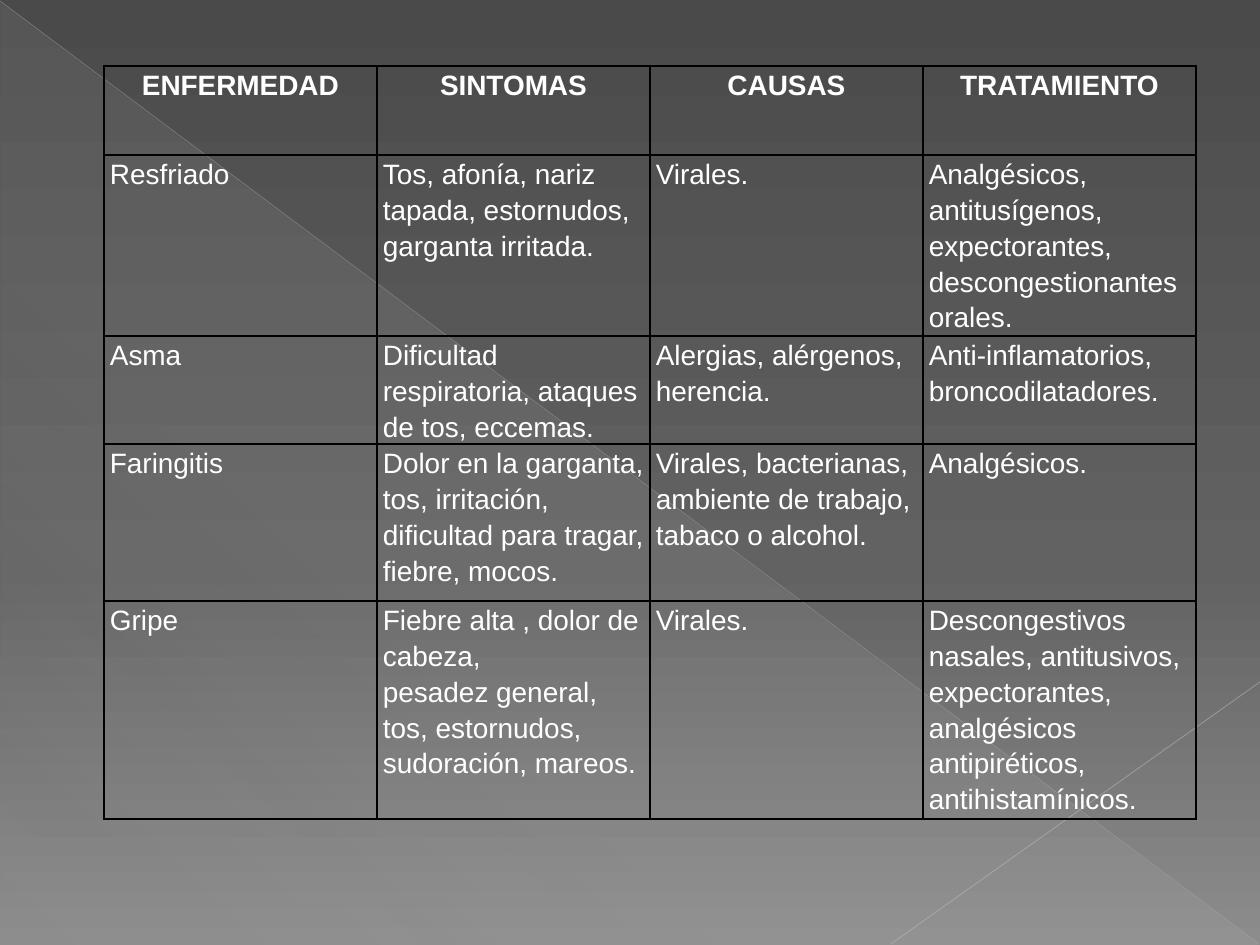
from lxml.etree import SubElement
from pptx import Presentation
from pptx.dml.color import RGBColor
from pptx.enum.shapes import MSO_CONNECTOR, MSO_SHAPE
from pptx.enum.text import PP_ALIGN
from pptx.oxml.ns import qn
from pptx.util import Pt

PX = 914400 // 126
BLACK = RGBColor(0x00, 0x00, 0x00)
WHITE = RGBColor(0xFF, 0xFF, 0xFF)
CHARCOAL = RGBColor(0x4A, 0x4A, 0x4A)
SLATE = RGBColor(0x62, 0x62, 0x62)
ASH = RGBColor(0x8C, 0x8C, 0x8C)
MIST = RGBColor(0xD2, 0xD2, 0xD2)
SILVER = RGBColor(0xBF, 0xBF, 0xBF)
PALE = RGBColor(0xC6, 0xC6, 0xC6)


def add_color(parent, color, opacity=100):
    tint = SubElement(parent, qn("a:srgbClr"), val=str(color))
    if opacity < 100:
        SubElement(tint, qn("a:alpha"), val=str(opacity * 1000))


def set_gradient(owner, stops, angle):
    gradient = next(owner.iter(qn("a:gradFill")))
    stop_list = gradient.find(qn("a:gsLst"))
    for old_stop in list(stop_list):
        stop_list.remove(old_stop)
    for position, color, opacity in stops:
        stop = SubElement(stop_list, qn("a:gs"), pos=str(position * 1000))
        add_color(stop, color, opacity)
    gradient.find(qn("a:lin")).set("ang", str(angle * 60000))


presentation = Presentation()
presentation.slide_width = 1260 * PX
presentation.slide_height = 945 * PX
slide = presentation.slides.add_slide(presentation.slide_layouts[6])

slide.background.fill.gradient()
set_gradient(slide.element, [(0, CHARCOAL, 100), (60, SLATE, 100), (100, ASH, 100)], 90)

sheen = slide.shapes.add_shape(MSO_SHAPE.RIGHT_TRIANGLE, 1 * PX, 2 * PX, 1258 * PX, 943 * PX)
sheen.shadow.inherit = False
sheen.line.fill.background()
sheen.fill.gradient()
set_gradient(sheen.element, [(0, MIST, 10), (70, MIST, 8), (100, MIST, 1)], 133)

diagonals = [
    ((0, 1, 1259, 944), SILVER, 0.39, 35),
    ((1260, 682, 891, 944), PALE, 0.47, 45),
]
for ends, color, width, opacity in diagonals:
    diagonal = slide.shapes.add_connector(MSO_CONNECTOR.STRAIGHT, *[end * PX for end in ends])
    diagonal.line.width = Pt(width)
    diagonal.line.color.rgb = color
    tint = next(diagonal.element.iter(qn("a:srgbClr")))
    SubElement(tint, qn("a:alpha"), val=str(opacity * 1000))
    SubElement(diagonal.element.spPr, qn("a:effectLst"))

illnesses = [
    ("ENFERMEDAD", "SINTOMAS", "CAUSAS", "TRATAMIENTO"),
    (
        "Resfriado",
        "Tos, afonía, nariz tapada, estornudos, garganta irritada.",
        "Virales.",
        "Analgésicos, antitusígenos, expectorantes, descongestionantes orales.",
    ),
    (
        "Asma",
        "Dificultad respiratoria, ataques de tos, eccemas.",
        "Alergias, alérgenos, herencia.",
        "Anti-inflamatorios, broncodilatadores.",
    ),
    (
        "Faringitis",
        "Dolor en la garganta, tos, irritación, dificultad para tragar, fiebre, mocos.",
        "Virales, bacterianas, ambiente de trabajo, tabaco o alcohol.",
        "Analgésicos.",
    ),
    (
        "Gripe",
        "Fiebre alta , dolor de cabeza,\npesadez general, tos, estornudos, sudoración, mareos.",
        "Virales.",
        "Descongestivos nasales, antitusivos, expectorantes,\n"
        "analgésicos antipiréticos, antihistamínicos.",
    ),
]
row_heights = [89, 181, 108, 157, 218]
column_width = 273

table = slide.shapes.add_table(
    len(illnesses), 4, 104 * PX, 66 * PX, 4 * column_width * PX, sum(row_heights) * PX
).table
table.first_row = False
table.horz_banding = False
for column in table.columns:
    column.width = column_width * PX

for row_index, (illness, height) in enumerate(zip(illnesses, row_heights)):
    table.rows[row_index].height = height * PX
    is_header = row_index == 0
    for column_index, wording in enumerate(illness):
        cell = table.cell(row_index, column_index)
        cell.margin_left = cell.margin_right = 6 * PX
        cell.margin_top = cell.margin_bottom = 0
        cell.text_frame.text = wording
        for paragraph in cell.text_frame.paragraphs:
            paragraph.alignment = PP_ALIGN.CENTER if is_header else PP_ALIGN.LEFT
            paragraph.line_spacing = 1.15
            for run in paragraph.runs:
                run.font.name = "Arial"
                run.font.size = Pt(16)
                run.font.bold = is_header
                run.font.color.rgb = WHITE
        properties = cell._tc.get_or_add_tcPr()
        for side in ("a:lnL", "a:lnR", "a:lnT", "a:lnB"):
            border = SubElement(properties, qn(side), w=str(Pt(1)))
            add_color(SubElement(border, qn("a:solidFill")), BLACK)
        cell.fill.background()

presentation.save("out.pptx")
